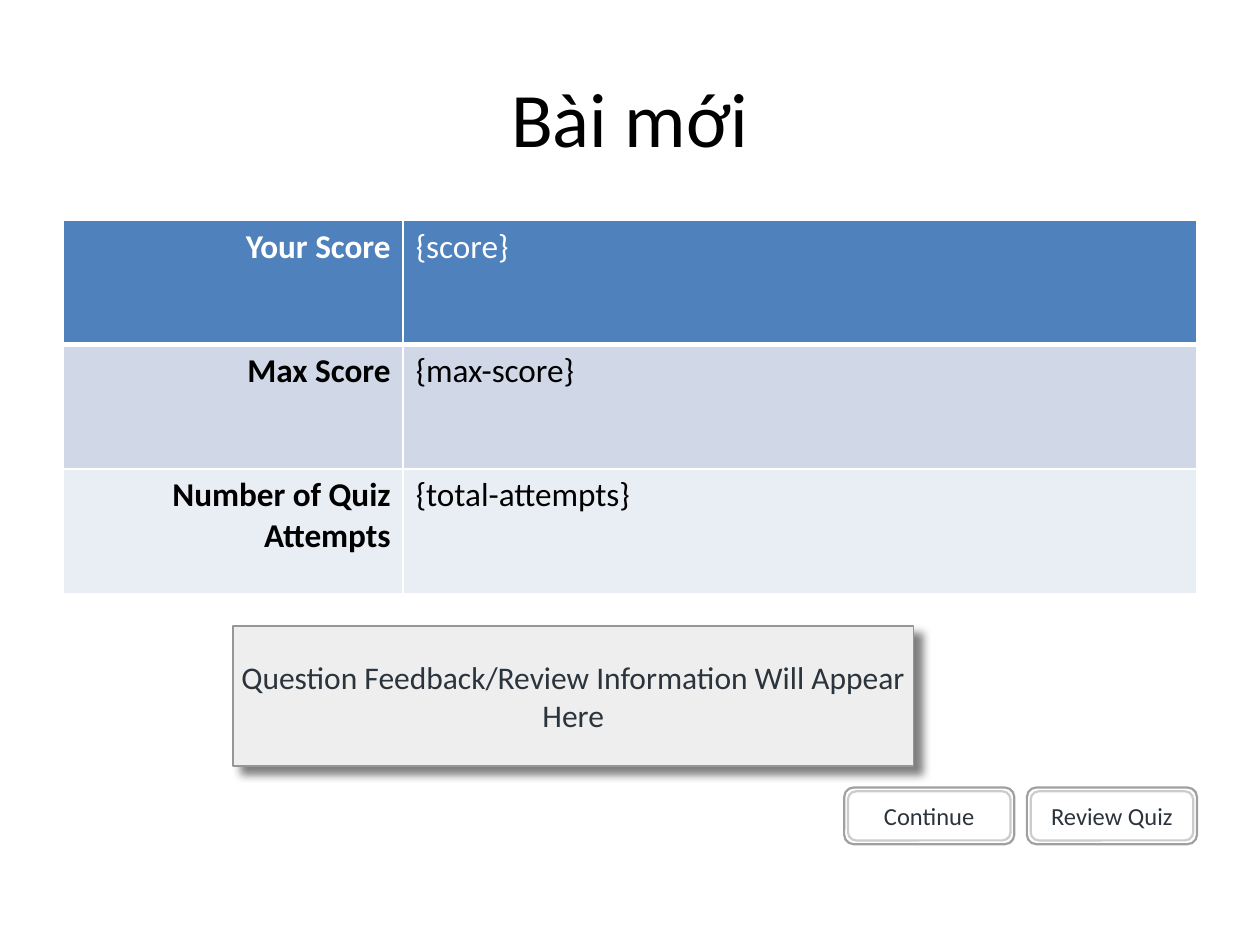
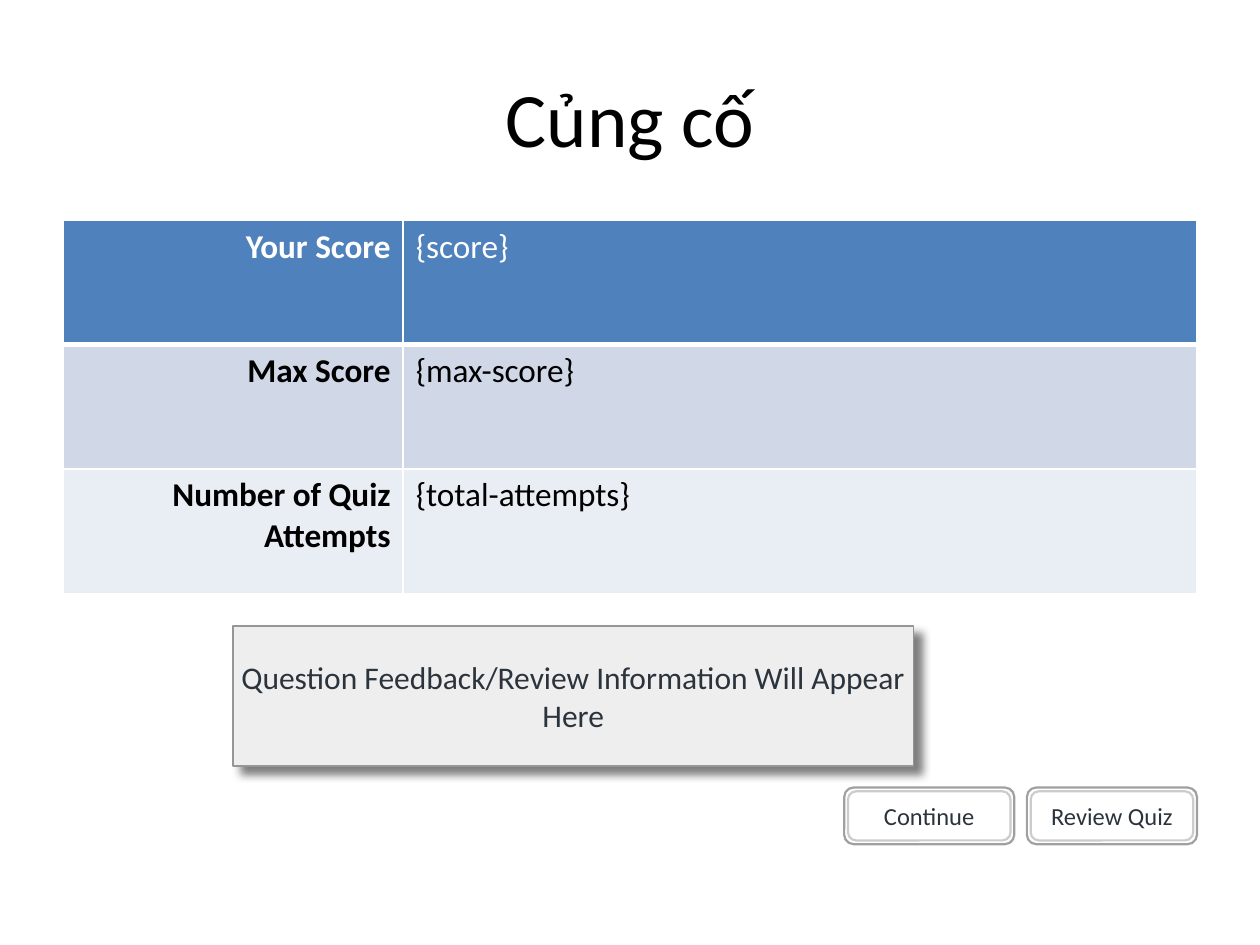
import pptx
import pptx.util
import pptx.dml.color
import pptx.enum.shapes
import pptx.enum.text
import pptx.oxml
import pptx.oxml.ns
from dataclasses import dataclass

Pt = pptx.util.Pt
RGB = pptx.dml.color.RGBColor.from_string
SHAPE = pptx.enum.shapes.MSO_SHAPE
ALIGN = pptx.enum.text.PP_ALIGN
ANCHOR = pptx.enum.text.MSO_ANCHOR
NS = pptx.oxml.ns.nsdecls("a")


@dataclass(frozen=True)
class Theme:
    font: str = "Calibri"
    black: str = "000000"
    white: str = "FFFFFF"
    header: str = "4F81BD"
    band_dark: str = "D0D8E8"
    band_light: str = "E9EDF4"
    ink: str = "2B333C"
    panel: str = "EEEEEE"
    panel_line: str = "969696"
    shadow: str = "808080"
    outer_line: str = "A0A0A0"
    inner_line: str = "CCCCCC"
    title_size: float = 44
    table_size: float = 19
    feedback_size: float = 18
    button_size: float = 14


T = Theme()


def write(tf, text, size, color, bold=False, align=ALIGN.CENTER):
    tf.word_wrap = True
    p = tf.paragraphs[0]
    p.alignment = align
    r = p.add_run()
    r.text = text
    r.font.name = T.font
    r.font.size = Pt(size)
    r.font.bold = bold
    r.font.color.rgb = RGB(color)


def add_box(shapes, kind, left, top, width, height, fill=None, line=None, weight=1):
    box = [Pt(v) for v in (left, top, width, height)]
    if kind is None:
        sp = shapes.add_textbox(*box)
    else:
        sp = shapes.add_shape(kind, *box)
        sp.shadow.inherit = False
        sp.fill.solid()
        sp.fill.fore_color.rgb = RGB(fill)
        sp.line.color.rgb = RGB(line)
        sp.line.width = Pt(weight)
    tf = sp.text_frame
    tf.margin_left = tf.margin_top = tf.margin_right = tf.margin_bottom = 0
    tf.vertical_anchor = ANCHOR.MIDDLE
    return sp


titles = ["Bài mới", "Củng cố"]
score_rows = [
    ("Your Score", "{score}", T.header, T.white),
    ("Max Score", "{max-score}", T.band_dark, T.black),
    ("Number of Quiz Attempts", "{total-attempts}", T.band_light, T.black),
]
buttons = ["Review Quiz", "Continue"]
margin, content_w = 36, 648
label_w, row_h = 194.4, 71.04
button_w, button_h, button_gap, inset = 97.2, 32.4, 7.2, 2.16

prs = pptx.Presentation()
prs.slide_width, prs.slide_height = Pt(720), Pt(540)

for title in titles:
    s = prs.slides.add_slide(prs.slide_layouts[6])
    s.background.fill.solid()
    s.background.fill.fore_color.rgb = RGB(T.white)

    sp = add_box(s.shapes, None, margin, 21.6, content_w, 90)
    write(sp.text_frame, title, T.title_size, T.black)

    table = s.shapes.add_table(len(score_rows), 2, Pt(margin), Pt(126),
                               Pt(content_w), Pt(row_h * len(score_rows))).table
    table.first_row = table.horz_banding = False
    table.columns[0].width = Pt(label_w)
    table.columns[1].width = Pt(content_w - label_w)
    for i, (label, value, fill, color) in enumerate(score_rows):
        table.rows[i].height = Pt(row_h)
        weights = {"lnL": 1, "lnR": 1, "lnT": 3 if i == 1 else 1, "lnB": 3 if i == 0 else 1}
        for j, text in enumerate((label, value)):
            cell = table.cell(i, j)
            tcPr = cell._tc.get_or_add_tcPr()
            for side, weight in weights.items():
                tcPr.append(pptx.oxml.parse_xml(
                    f'<a:{side} {NS} w="{Pt(weight)}"><a:solidFill>'
                    f'<a:srgbClr val="{T.white}"/></a:solidFill></a:{side}>'))
            cell.fill.solid()
            cell.fill.fore_color.rgb = RGB(fill)
            write(cell.text_frame, text, T.table_size, color, bold=j == 0,
                  align=ALIGN.RIGHT if j == 0 else ALIGN.LEFT)

    sp = add_box(s.shapes, SHAPE.RECTANGLE, 133.2, 357.84, 388.8, 79.92,
                 T.panel, T.panel_line)
    write(sp.text_frame, "Question Feedback/Review Information Will Appear Here",
          T.feedback_size, T.ink)
    effects = sp._element.spPr.find(pptx.oxml.ns.qn("a:effectLst"))
    effects.append(pptx.oxml.parse_xml(
        f'<a:outerShdw {NS} blurRad="{Pt(5)}" dist="{Pt(5.7)}" dir="2700000" algn="tl" '
        f'rotWithShape="0"><a:srgbClr val="{T.shadow}"/></a:outerShdw>'))

    for i, text in enumerate(buttons):
        left = margin + content_w - button_w - i * (button_w + button_gap)
        group = s.shapes.add_group_shape()
        add_box(group.shapes, SHAPE.ROUNDED_RECTANGLE, left, 450, button_w, button_h,
                T.white, T.outer_line, 1.25)
        sp = add_box(group.shapes, SHAPE.ROUNDED_RECTANGLE, left + inset, 450 + inset,
                     button_w - 2 * inset, button_h - 2 * inset,
                     T.white, T.inner_line, 1.25)
        write(sp.text_frame, text, T.button_size, T.ink)

prs.save("out.pptx")
